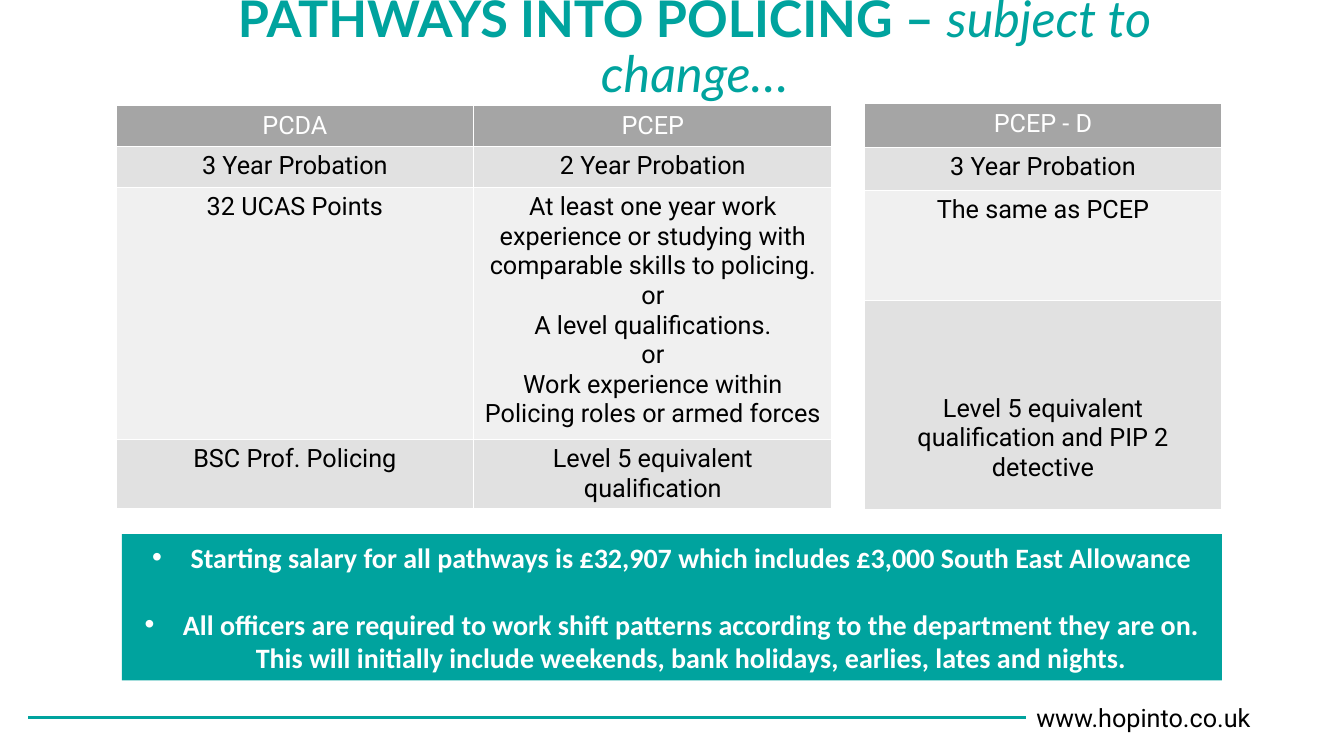
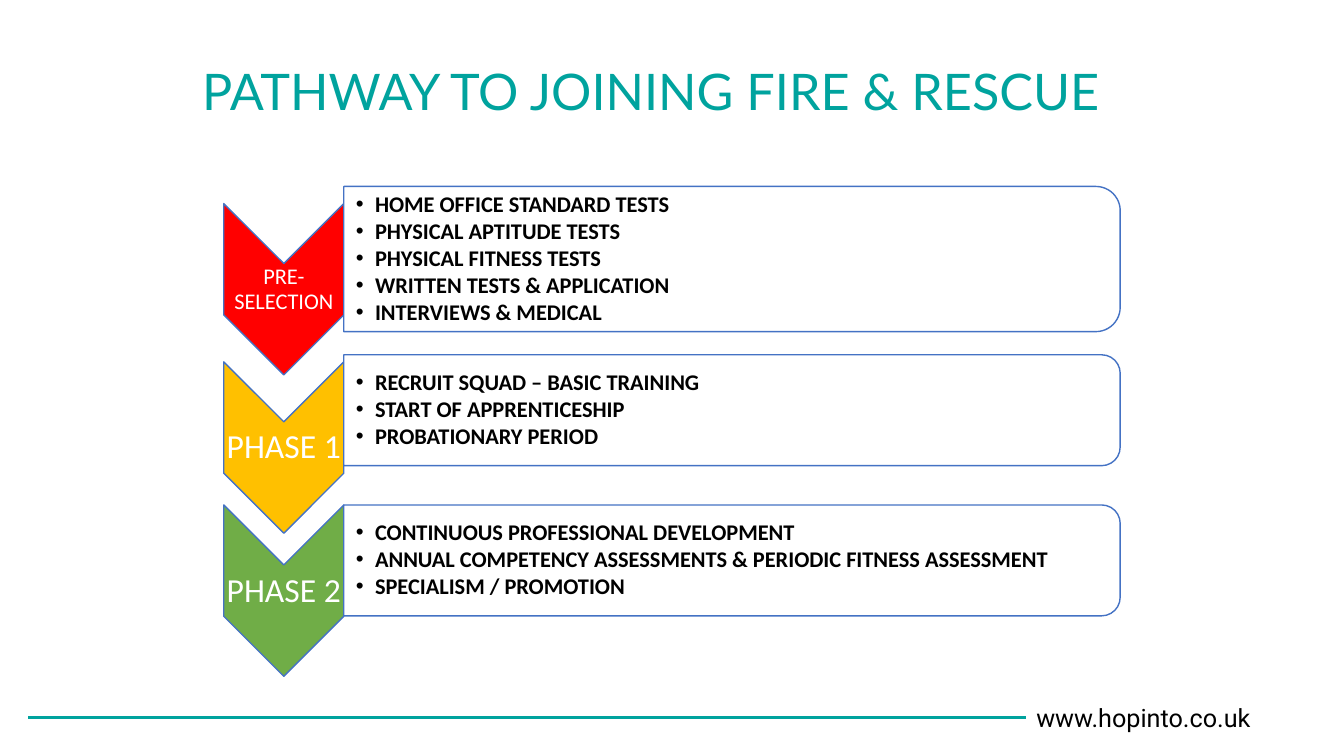
from dataclasses import dataclass

from lxml import etree
from pptx import Presentation
from pptx.dml.color import RGBColor
from pptx.enum.shapes import MSO_CONNECTOR, MSO_SHAPE
from pptx.enum.text import MSO_ANCHOR, MSO_AUTO_SIZE, PP_ALIGN
from pptx.oxml.ns import qn
from pptx.util import Inches, Pt

LEFT, CENTER = PP_ALIGN.LEFT, PP_ALIGN.CENTER
TOP, MIDDLE = MSO_ANCHOR.TOP, MSO_ANCHOR.MIDDLE
CHEVRON, CARD = MSO_SHAPE.CHEVRON, MSO_SHAPE.ROUND_2_SAME_RECTANGLE
STRAIGHT = MSO_CONNECTOR.STRAIGHT
TITLE_AND_CONTENT, TITLE_ONLY = 1, 5


@dataclass(frozen=True)
class Theme:
    teal: str = "00A39E"
    white: str = "FFFFFF"
    black: str = "000000"
    outline: str = "4472C4"
    header: str = "A5A5A5"
    band_dark: str = "E1E1E1"
    band_light: str = "F0F0F0"
    red: str = "FF0000"
    amber: str = "FFC000"
    green: str = "70AD47"
    title_font: str = "Lato"
    table_font: str = "Roboto"
    body_font: str = "Calibri"
    title_size: int = 36
    phase_size: int = 24
    notice_size: int = 20
    table_size: int = 18
    list_size: int = 16


THEME = Theme()


def rgb(color):
    return RGBColor.from_string(color)


def inches(*lengths):
    return [Inches(length) for length in lengths]


class Builder:
    """Holds the deck, its theme and the current page."""

    def __init__(self, theme):
        self.theme = theme
        self.deck = Presentation()
        self.deck.slide_width, self.deck.slide_height = inches(13.33, 7.5)
        self.page = None

    def new_page(self, layout, title, bounds):
        """Start a page; title is a list of (text, bold, italic) spans."""
        self.page = self.deck.slides.add_slide(self.deck.slide_layouts[layout])
        for holder in list(self.page.placeholders):
            if holder.placeholder_format.idx >= 10:
                holder.element.getparent().remove(holder.element)
        box = self.page.shapes.title
        self.place(box, bounds)
        frame = self.prepare(box, MIDDLE)
        para = frame.paragraphs[0]
        for text, bold, italic in title:
            span = para.add_run()
            span.text = text
            span.font.bold, span.font.italic = bold, italic
        para.line_spacing = 0.9
        self.style(para, self.theme.title_font, self.theme.title_size,
                   self.theme.teal, CENTER)
        self.footer()

    def footer(self):
        line = self.page.shapes.add_connector(
            STRAIGHT, *inches(0.28, 7.12, 10.18, 7.12))
        line.line.color.rgb = rgb(self.theme.teal)
        line.line.width = Pt(2)
        etree.SubElement(line.element.spPr, qn("a:effectLst"))
        self.text_box((10.18, 6.92, 2.37, 0.4), ["www.hopinto.co.uk"],
                      self.theme.table_font, self.theme.table_size,
                      self.theme.black, LEFT, anchor=TOP)

    def place(self, box, bounds):
        box.left, box.top, box.width, box.height = inches(*bounds)

    def prepare(self, box, anchor, insets=(0.1, 0.05, 0.1, 0.05)):
        frame = box.text_frame
        frame.word_wrap = True
        frame.auto_size = MSO_AUTO_SIZE.NONE
        frame.vertical_anchor = anchor
        (frame.margin_left, frame.margin_top,
         frame.margin_right, frame.margin_bottom) = inches(*insets)
        return frame

    def style(self, para, font, size, color, align, bold=None):
        para.alignment = align
        para.font.name, para.font.size = font, Pt(size)
        para.font.color.rgb = rgb(color)
        para.font.bold = bold

    def bullet(self, para, indent):
        props = para._p.get_or_add_pPr()
        props.set("marL", str(Inches(indent)))
        props.set("indent", str(-Inches(indent)))
        etree.SubElement(props, qn("a:buFont"), typeface="Arial")
        etree.SubElement(props, qn("a:buChar"), char="•")

    def fill_text(self, frame, lines, font, size, color, align, bold=None,
                  indent=0, spacing=None, before=0, after=0):
        for index, line in enumerate(lines):
            para = frame.add_paragraph() if index else frame.paragraphs[0]
            para.text = line
            if indent:
                self.bullet(para, indent)
            para.line_spacing = spacing
            para.space_before = Pt(before if index else 0)
            para.space_after = Pt(after)
            self.style(para, font, size, color, align, bold)

    def text_box(self, bounds, lines, *look, anchor=MIDDLE,
                 insets=(0.1, 0.05, 0.1, 0.05), **options):
        box = self.page.shapes.add_textbox(*inches(*bounds))
        self.fill_text(self.prepare(box, anchor, insets), lines, *look,
                       **options)

    def notice(self, bounds, lines):
        """Fill the body placeholder with a bulleted, coloured panel."""
        theme = self.theme
        box = self.page.placeholders[1]
        self.place(box, bounds)
        box.fill.solid()
        box.fill.fore_color.rgb = rgb(theme.teal)
        self.fill_text(self.prepare(box, MIDDLE), lines, theme.body_font,
                       theme.notice_size, theme.white, CENTER, bold=True,
                       indent=0.38, before=24)

    def table(self, left, top, column, heights, rows):
        """Add a table; each cell is a list of lines."""
        theme = self.theme
        count = len(rows[0])
        grid = self.page.shapes.add_table(
            len(rows), count,
            *inches(left, top, column * count, sum(heights))).table
        grid.first_row = grid.horz_banding = False
        for index, (height, row) in enumerate(zip(heights, rows)):
            grid.rows[index].height = Inches(height)
            band = theme.band_dark if index % 2 else theme.band_light
            for place, lines in enumerate(row):
                cell = grid.cell(index, place)
                cell.fill.solid()
                cell.fill.fore_color.rgb = rgb(band if index else theme.header)
                self.cell_borders(cell)
                self.fill_text(cell.text_frame, lines, theme.table_font,
                               theme.table_size,
                               theme.black if index else theme.white, CENTER,
                               bold=False)
        return grid

    def cell_borders(self, cell):
        props = cell._tc.get_or_add_tcPr()
        for index, side in enumerate(("lnL", "lnR", "lnT", "lnB")):
            border = etree.Element(qn("a:" + side), w=str(Pt(1)))
            fill = etree.SubElement(border, qn("a:solidFill"))
            etree.SubElement(fill, qn("a:srgbClr"), val=self.theme.white)
            props.insert(index, border)

    def turned_shape(self, kind, bounds, color):
        """Add a shape turned a quarter, so that it covers the bounds."""
        left, top, width, height = bounds
        shift = (width - height) / 2
        shape = self.page.shapes.add_shape(
            kind, *inches(left + shift, top - shift, height, width))
        shape.rotation = 90
        shape.shadow.inherit = False
        shape.fill.solid()
        shape.fill.fore_color.rgb = rgb(color)
        shape.line.color.rgb = rgb(self.theme.outline)
        shape.line.width = Pt(1)

    def phase(self, label, size, color, arrow_top, card_top, card_height, lines):
        """Add one step: a downward chevron and its card of points."""
        theme = self.theme
        arrow_left, arrow_width, arrow_height = 2.22, 1.19, 1.7
        card_left = arrow_left + arrow_width
        self.turned_shape(
            CHEVRON, (arrow_left, arrow_top, arrow_width, arrow_height), color)
        self.text_box((arrow_left, arrow_top + 0.6, arrow_width, 0.51), [label],
                      theme.body_font, size, theme.white, CENTER,
                      insets=(0.01,) * 4, spacing=0.9)
        card = (card_left, card_top, 7.7, card_height)
        self.turned_shape(CARD, card, theme.white)
        self.text_box(card, lines, theme.body_font, theme.list_size,
                      theme.black, LEFT, insets=(0.12, 0.01, 0.01, 0.01),
                      bold=True, indent=0.19, spacing=0.9, after=2)


def policing(builder):
    builder.new_page(TITLE_AND_CONTENT,
                     [("PATHWAYS INTO POLICING – ", True, False),
                      ("subject to change…", False, True)],
                     (1.75, -0.24, 10.28, 1.45))
    builder.notice((1.21, 5.3, 10.91, 1.45), [
        "Starting salary for all pathways is £32,907 which includes £3,000 "
        "South East Allowance",
        "All officers are required to work shift patterns according to the "
        "department they are on. This will initially include weekends, bank "
        "holidays, earlies, lates and nights."])

    # Entry routes
    builder.table(1.15, 1.05, 3.55, (0.4, 0.41, 2.5, 0.69), [
        [["PCDA"], ["PCEP"]],
        [["3 Year Probation"], ["2 Year Probation"]],
        [["32 UCAS Points"],
         ["At least one year work experience or studying with comparable "
          "skills to policing.", "or", "A level qualifications.", "or",
          "Work experience within Policing roles or armed forces"]],
        [["BSC Prof. Policing"], ["Level 5 equivalent qualification"]]])

    # Detective route
    detective = builder.table(8.57, 1.03, 3.55, (0.43, 0.43, 1.09, 2.08), [
        [["PCEP - D"]],
        [["3 Year Probation"]],
        [["The same as PCEP"]],
        [["Level 5 equivalent qualification and PIP 2 detective"]]])
    detective.cell(3, 0).margin_top = Inches(0.93)


def fire_and_rescue(builder):
    theme = builder.theme
    builder.new_page(TITLE_ONLY,
                     [("PATHWAY TO JOINING FIRE & RESCUE", False, False)],
                     (0.47, 0.4, 11.97, 1.06))
    # Phases: label, size, colour, arrow top, card top, card height, points
    phases = [
        ("PRE-SELECTION", theme.list_size, theme.red, 2.02, 1.85, 1.44,
         ["HOME OFFICE STANDARD TESTS", "PHYSICAL APTITUDE TESTS",
          "PHYSICAL FITNESS TESTS", "WRITTEN TESTS & APPLICATION",
          "INTERVIEWS & MEDICAL"]),
        ("PHASE 1", theme.phase_size, theme.amber, 3.59, 3.52, 1.1,
         ["RECRUIT SQUAD – BASIC TRAINING", "START OF APPRENTICESHIP",
          "PROBATIONARY PERIOD"]),
        ("PHASE 2", theme.phase_size, theme.green, 5.01, 5.01, 1.1,
         ["CONTINUOUS PROFESSIONAL DEVELOPMENT",
          "ANNUAL COMPETENCY ASSESSMENTS & PERIODIC FITNESS ASSESSMENT",
          "SPECIALISM / PROMOTION"]),
    ]
    for phase in phases:
        builder.phase(*phase)


def main():
    builder = Builder(THEME)
    policing(builder)
    fire_and_rescue(builder)
    builder.deck.save("out.pptx")


if __name__ == "__main__":
    main()
